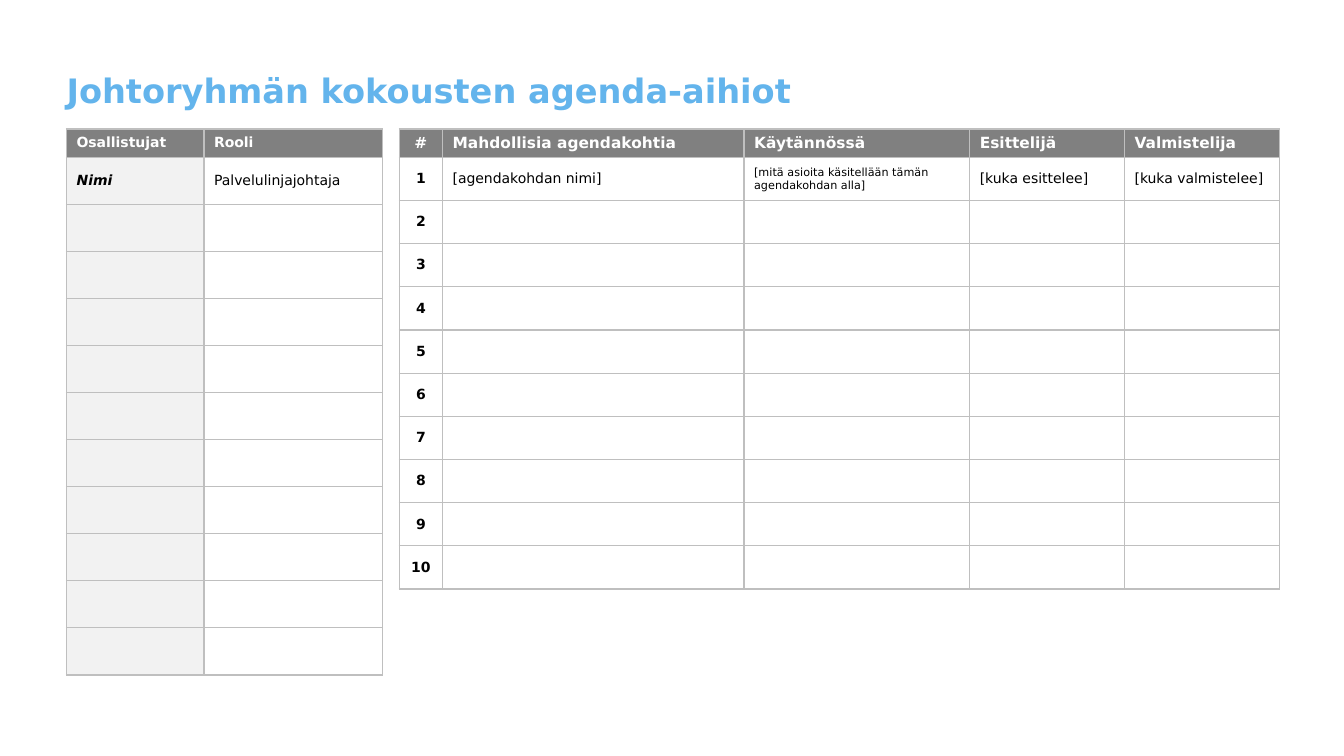
from pptx import Presentation
from pptx.dml.color import RGBColor
from pptx.enum.text import MSO_ANCHOR as Anchor, MSO_AUTO_SIZE as AutoSize, PP_ALIGN as Align
from pptx.oxml import parse_xml
from pptx.oxml.ns import nsdecls
from pptx.util import Pt

BLUE = RGBColor(0x63, 0xB4, 0xEC)
GREY = RGBColor(0x80, 0x80, 0x80)
PALE = RGBColor(0xF2, 0xF2, 0xF2)
RULE = RGBColor(0xBF, 0xBF, 0xBF)
WHITE = RGBColor(0xFF, 0xFF, 0xFF)
BLACK = RGBColor(0, 0, 0)
FONT = "DejaVu Sans"
TABLE_TOP, HEADER_H = 92.16, 20.16


def add_text(tf, text, color, align=Align.LEFT, **fmt):
    tf.text = text
    p = tf.paragraphs[0]
    p.alignment = align
    font = p.runs[0].font
    font.color.rgb = color
    for name, value in {"name": FONT, **fmt}.items():
        setattr(font, name, value)
    return p


def add_grid(left, widths, row_count, row_h):
    """Add a ruled table with a grey header row and unfilled body cells."""
    height = HEADER_H + (row_count - 1) * row_h
    table = s.shapes.add_table(row_count, len(widths), Pt(left), Pt(TABLE_TOP),
                               Pt(sum(widths)), Pt(height)).table
    table.first_row = table.horz_banding = False
    for col, width in zip(table.columns, widths):
        col.width = Pt(width)
    for i, row in enumerate(table.rows):
        row.height = Pt(row_h if i else HEADER_H)
        for cell in row.cells:
            cell.vertical_anchor = Anchor.MIDDLE
            tc_pr = cell._tc.get_or_add_tcPr()
            for side in "LRTB":
                tc_pr.append(parse_xml(
                    f'<a:ln{side} {nsdecls("a")} w="{Pt(1)}"><a:solidFill>'
                    f'<a:srgbClr val="{RULE}"/></a:solidFill></a:ln{side}>'))
            if i:
                cell.fill.background()
            else:
                cell.fill.solid()
                cell.fill.fore_color.rgb = GREY
    return table


prs = Presentation()
prs.slide_width, prs.slide_height = Pt(960), Pt(540)
s = prs.slides.add_slide(prs.slide_layouts[5])

# Title
title = s.shapes.title
title.left, title.top, title.width, title.height = Pt(47.5), Pt(47.5), Pt(864.7), Pt(37.4)
tf = title.text_frame
tf.margin_left = tf.margin_right = tf.margin_top = tf.margin_bottom = 0
tf.vertical_anchor = Anchor.MIDDLE
tf.auto_size = AutoSize.NONE
p = add_text(tf, "Johtoryhmän kokousten agenda-aihiot", BLUE, size=Pt(24), bold=True)
p.line_spacing = 0.9

# Participants
people = add_grid(47.5, [98.2, 127.6], 12, 33.64)
for j, head in enumerate(["Osallistujat", "Rooli"]):
    add_text(people.cell(0, j).text_frame, head, WHITE, size=Pt(10), bold=True)
add_text(people.cell(1, 0).text_frame, "Nimi", BLACK, size=Pt(10), bold=True, italic=True)
add_text(people.cell(1, 1).text_frame, "Palvelulinjajohtaja", BLACK, size=Pt(10), bold=False)
for i in range(1, 12):
    name_cell = people.cell(i, 0)
    name_cell.fill.solid()
    name_cell.fill.fore_color.rgb = PALE

# Agenda
agenda = add_grid(285.2, [30.9, 215.4, 161.2, 110.6, 110.6], 11, 30.86)
columns = [
    ("#", "1", 10),
    ("Mahdollisia agendakohtia", "[agendakohdan nimi]", 10),
    ("Käytännössä", "[mitä asioita käsitellään tämän agendakohdan alla]", 8),
    ("Esittelijä", "[kuka esittelee]", 10),
    ("Valmistelija", "[kuka valmistelee]", 10),
]
for j, (head, example, size) in enumerate(columns):
    align = Align.LEFT if j else Align.CENTER
    add_text(agenda.cell(0, j).text_frame, head, WHITE, align, size=Pt(11), bold=True)
    add_text(agenda.cell(1, j).text_frame, example, BLACK, align, size=Pt(size), bold=j == 0)
for i in range(2, 11):
    add_text(agenda.cell(i, 0).text_frame, str(i), BLACK, Align.CENTER, size=Pt(10), bold=True)

prs.save("out.pptx")
